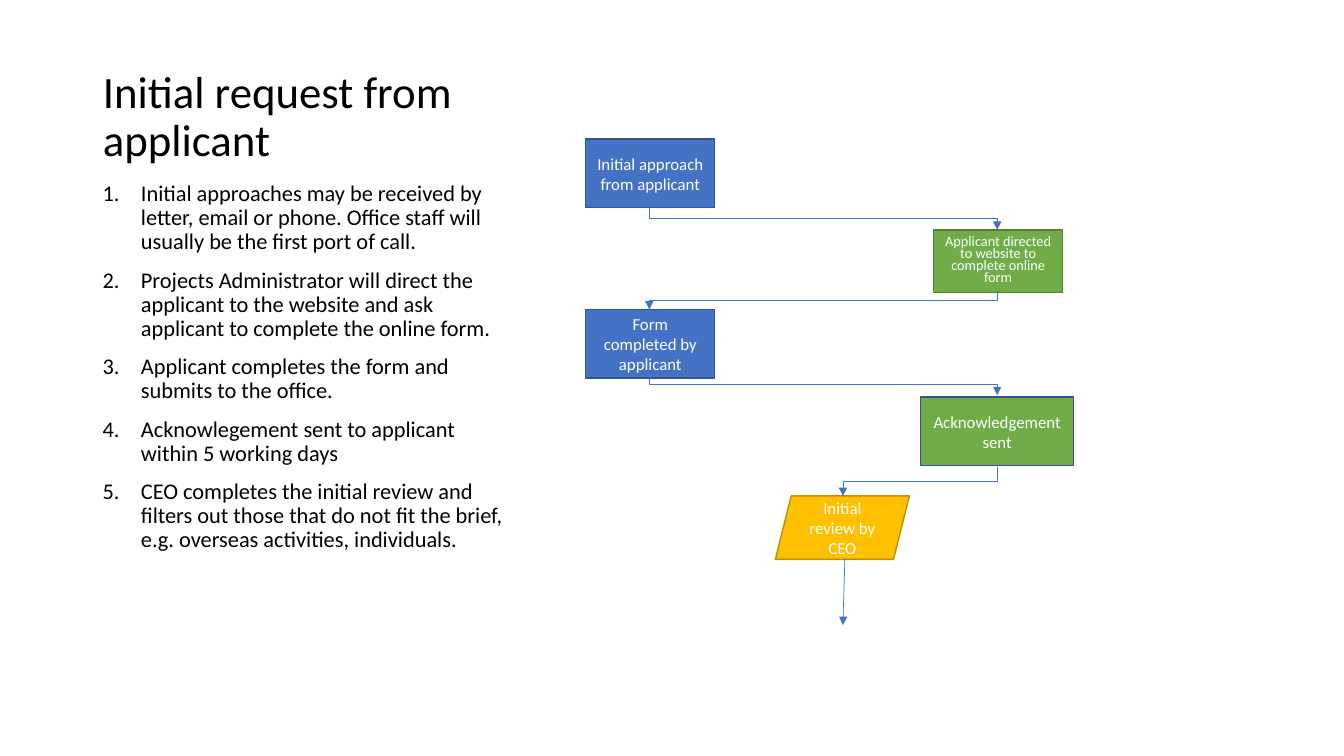
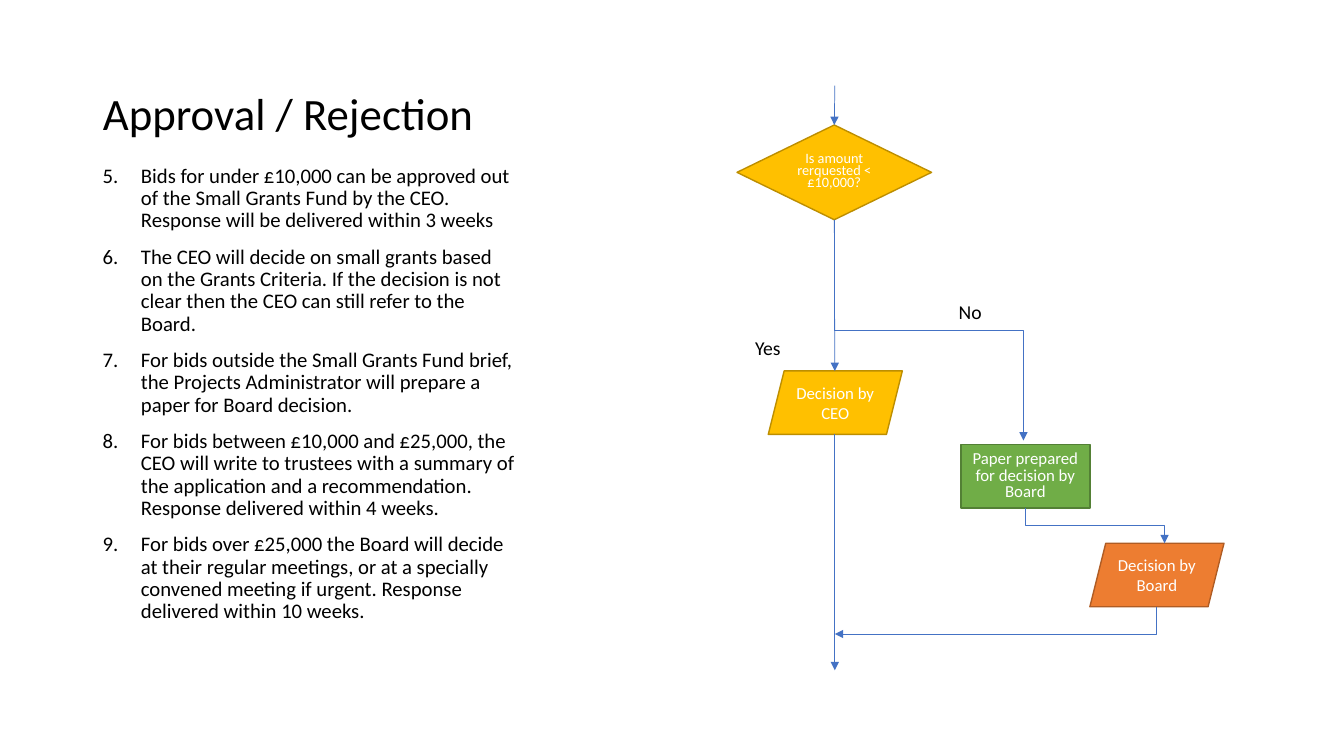
import pptx
import pptx.util
import pptx.dml.color
import pptx.enum.shapes
import pptx.enum.text
import pptx.oxml
import pptx.oxml.ns

COLORS = {
    "black": "000000",
    "white": "FFFFFF",
    "blue": "4472C4",
    "blue edge": "325491",
    "green": "70AD47",
    "green edge": "538035",
    "gold": "FFC000",
    "gold edge": "BD8E00",
    "orange": "ED7D31",
    "orange edge": "AF5C24",
}
SHAPES = pptx.enum.shapes.MSO_SHAPE
CONNECTORS = pptx.enum.shapes.MSO_CONNECTOR
ANCHORS = pptx.enum.text.MSO_ANCHOR
ALIGNMENTS = pptx.enum.text.PP_ALIGN
EMU_PER_PX = 9144


def px(*lengths):
    return [pptx.util.Emu(round(length * EMU_PER_PX)) for length in lengths]


def rgb(name):
    return pptx.dml.color.RGBColor.from_string(COLORS[name])


def add_xml(parent, tag, **attributes):
    child = parent.makeelement(pptx.oxml.ns.qn(tag), attributes)
    parent.append(child)


class FlowDeck:
    font = "Calibri"
    left = 92
    column_width = 430

    def __init__(self):
        self.presentation = pptx.Presentation()
        self.presentation.slide_width, self.presentation.slide_height = px(1333, 750)
        self.slide = None

    def add_text(self, paragraph, text, size, color="black", align=ALIGNMENTS.LEFT, spacing=1.0, before=0):
        paragraph.alignment = align
        paragraph.line_spacing = spacing
        paragraph.space_before = pptx.util.Pt(before)
        run = paragraph.add_run()
        run.text = text
        run.font.name = self.font
        run.font.size = pptx.util.Pt(size)
        run.font.color.rgb = rgb(color)

    def start_slide(self, title, height):
        self.slide = self.presentation.slides.add_slide(self.presentation.slide_layouts[5])
        shape = self.slide.shapes.title
        shape.left, shape.top, shape.width, shape.height = px(self.left, 50, self.column_width, height)
        frame = shape.text_frame
        frame.word_wrap = True
        frame.auto_size = pptx.enum.text.MSO_AUTO_SIZE.NONE
        frame.vertical_anchor = ANCHORS.BOTTOM
        self.add_text(frame.paragraphs[0], title, 32, spacing=0.9)

    def text_box(self, left, top, width, height):
        frame = self.slide.shapes.add_textbox(*px(left, top, width, height)).text_frame
        frame.word_wrap = True
        return frame

    def label(self, text, left, top):
        self.add_text(self.text_box(left, top, 46, 34).paragraphs[0], text, 14)

    def steps(self, items, top, height, size, start=1):
        frame = self.text_box(self.left, top, self.column_width, height)
        indent = px(38)[0]
        for index, item in enumerate(items):
            paragraph = frame.add_paragraph() if index else frame.paragraphs[0]
            self.add_text(paragraph, item, size, spacing=0.9, before=10)
            properties = paragraph._p.get_or_add_pPr()
            properties.set("marL", str(indent))
            properties.set("indent", str(-indent))
            add_xml(properties, "a:buFont", typeface="+mj-lt")
            add_xml(properties, "a:buAutoNum", type="arabicPeriod", startAt=str(start))

    def node(self, text, box, color, kind=SHAPES.RECTANGLE, edge=None, size=12, spacing=1.0, before=0):
        shape = self.slide.shapes.add_shape(kind, *px(*box))
        shape.shadow.inherit = False
        shape.fill.solid()
        shape.fill.fore_color.rgb = rgb(color)
        shape.line.color.rgb = rgb(edge or color + " edge")
        shape.line.width = pptx.util.Pt(1)
        frame = shape.text_frame
        frame.word_wrap = True
        frame.vertical_anchor = ANCHORS.MIDDLE
        self.add_text(frame.paragraphs[0], text, size, "white", ALIGNMENTS.CENTER, spacing, before)
        return shape

    def decision(self, text, left, top, color):
        return self.node(text, (left, top, 133, 63), color, SHAPES.PARALLELOGRAM)

    def connector(self, kind, begin, end):
        connector = self.slide.shapes.add_connector(kind, *px(*begin, *end))
        connector.line.color.rgb = rgb("blue")
        connector.line.width = pptx.util.Pt(0.5)
        properties = connector._element.spPr
        add_xml(properties.find(pptx.oxml.ns.qn("a:ln")), "a:tailEnd", type="triangle")
        add_xml(properties, "a:effectLst")
        return connector

    def arrow(self, begin, end):
        return self.connector(CONNECTORS.STRAIGHT, begin, end)

    def elbow(self, begin, end, preset="bentConnector3"):
        (x1, y1), (x2, y2) = begin, end
        middle_x, middle_y = (x1 + x2) / 2, (y1 + y2) / 2
        half_width, half_height = abs(y2 - y1) / 2, abs(x2 - x1) / 2
        rightward = x2 > x1
        side = half_width if rightward else -half_width
        connector = self.connector(
            CONNECTORS.ELBOW,
            (middle_x + side, middle_y - half_height),
            (middle_x - side, middle_y + half_height),
        )
        properties = connector._element.spPr
        degrees = 270 if rightward else 90
        properties.find(pptx.oxml.ns.qn("a:xfrm")).set("rot", str(degrees * 60000))
        properties.find(pptx.oxml.ns.qn("a:prstGeom")).set("prst", preset)


def build_request(deck):
    deck.start_slide("Initial request from applicant", 120)
    deck.steps([
        "Initial approaches may be received by letter, email or phone. Office staff will usually be the first port of call.",
        "Projects Administrator will direct the applicant to the website and ask applicant to complete the online form.",
        "Applicant completes the form and submits to the office.",
        "Acknowlegement sent to applicant within 5 working days",
        "CEO completes the initial review and filters out those that do not fit the brief, e.g. overseas activities, individuals.",
    ], 176, 466, 16)
    deck.node("Initial approach from applicant", (581, 138, 128, 68), "blue")
    deck.node("Applicant directed to website to complete online form", (926, 228, 128, 62), "green",
              size=10.2, spacing=0.7, before=10)
    deck.node("Form completed by applicant", (581, 307, 128, 68), "blue")
    deck.decision("Initial review by CEO", 769, 492, "gold")
    deck.node("Acknowledgement sent", (913, 394, 152, 68), "green", edge="blue edge")
    applicant, office, review = 644, 989, 836
    deck.elbow((applicant, 206), (office, 228))
    deck.elbow((office, 289), (applicant, 307))
    deck.elbow((applicant, 370), (office, 392))
    deck.elbow((office, 463), (review, 492))
    deck.arrow((838, 554), (review, 620))


def build_approval(deck):
    deck.start_slide("Approval / Rejection", 94)
    deck.steps([
        "Bids for under £10,000 can be approved out of the Small Grants Fund by the CEO. Response will be delivered within 3 weeks",
        "The CEO will decide on small grants based on the Grants Criteria. If the decision is not clear then the CEO can still refer to the Board.",
        "For bids outside the Small Grants Fund brief, the Projects Administrator will prepare a paper for Board decision.",
        "For bids between £10,000 and £25,000, the CEO will write to trustees with a summary of the application and a recommendation. Response delivered within 4 weeks.",
        "For bids over £25,000 the Board will decide at their regular meetings, or at a specially convened meeting if urgent. Response delivered within 10 weeks.",
    ], 159, 483, 14.8, start=5)
    amount = deck.node("Is amount rerquested < £10,000?", (731, 124, 193, 94), "gold", SHAPES.DIAMOND,
                       size=10.2, spacing=0.7, before=10)
    deck.decision("Decision by CEO", 762, 368, "gold")
    deck.node("Paper prepared for decision by Board", (953, 441, 128, 63), "green", spacing=0.8, before=10)
    deck.decision("Decision by Board", 1081, 539, "orange")
    main_line = 828
    deck.arrow((main_line, 85), (827, 124)).end_connect(amount, 0)
    deck.elbow((827, 218), (1015, 437))
    deck.arrow((827, 218), (main_line, 368)).begin_connect(amount, 2)
    deck.elbow((1017, 504), (1155, 539))
    deck.arrow((main_line, 431), (main_line, 665))
    deck.label("Yes", 739, 328)
    deck.label("No", 941, 293)
    deck.elbow((1147, 602), (main_line, 629), "bentConnector2")


def main():
    deck = FlowDeck()
    build_request(deck)
    build_approval(deck)
    deck.presentation.save("out.pptx")


if __name__ == "__main__":
    main()
